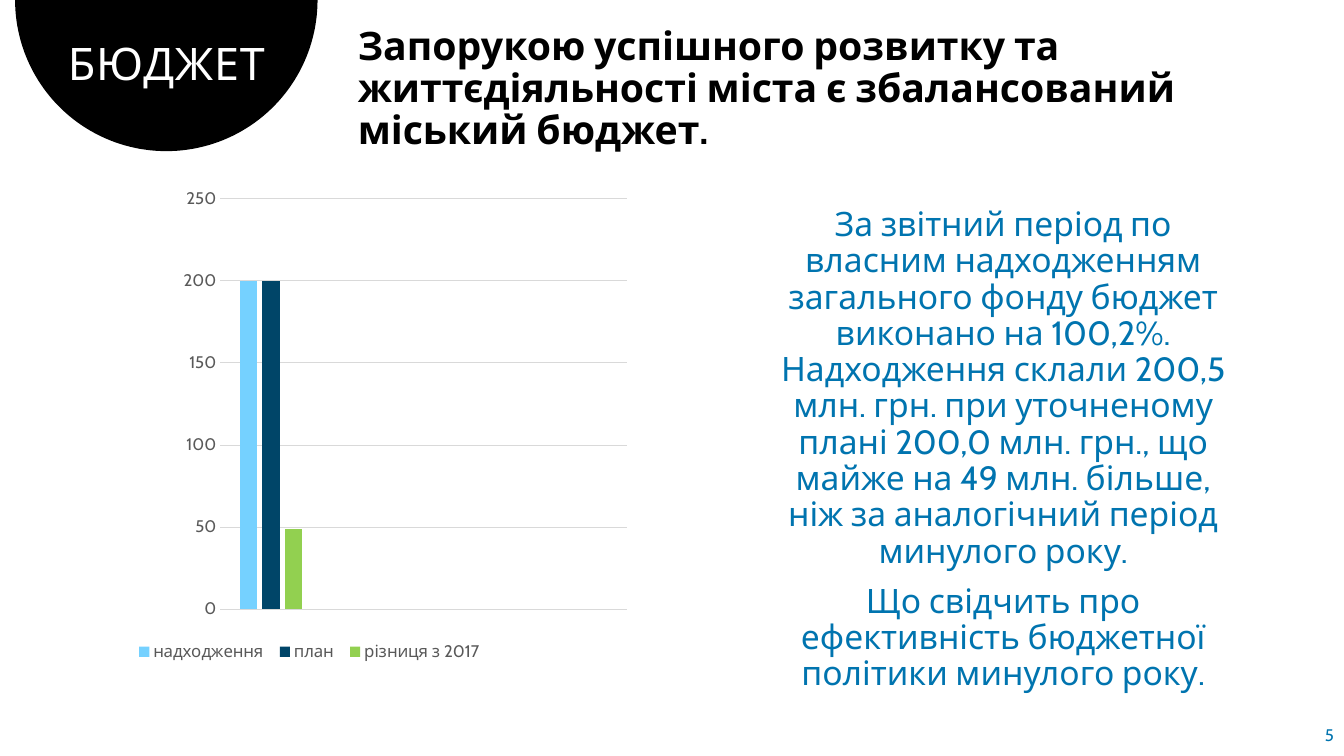
from math import cos, pi, sin

from lxml import etree
from pptx import Presentation
from pptx.chart.data import CategoryChartData
from pptx.dml.color import RGBColor
from pptx.enum.chart import XL_CHART_TYPE, XL_LEGEND_POSITION, XL_TICK_MARK
from pptx.enum.text import MSO_ANCHOR, PP_ALIGN
from pptx.oxml.ns import qn
from pptx.util import Inches, Pt

COLUMNS = XL_CHART_TYPE.COLUMN_CLUSTERED
BOTTOM = XL_LEGEND_POSITION.BOTTOM
NO_TICKS = XL_TICK_MARK.NONE
LEFT, CENTER, RIGHT = PP_ALIGN.LEFT, PP_ALIGN.CENTER, PP_ALIGN.RIGHT
TOP, MIDDLE = MSO_ANCHOR.TOP, MSO_ANCHOR.MIDDLE

COLORS = {
    "black": "000000",
    "white": "FFFFFF",
    "blue": "0074AF",
    "grey": "595959",
    "grid": "D9D9D9",
    "income": "75D1FF",
    "plan": "004568",
    "growth": "92D050",
}


def rgb(name):
    return RGBColor.from_string(COLORS[name])


class BudgetSlide:
    font_name = "Cabin"

    def __init__(self, presentation):
        self.slide = presentation.slides.add_slide(presentation.slide_layouts[6])

    def style(self, font, size, color, bold=False):
        font.name = self.font_name
        font.size = Pt(size)
        font.bold = bold
        font.color.rgb = rgb(color)

    def half_disc(self, center_x, radius, color, steps=90):
        angles = [pi * step / steps for step in range(steps + 1)]
        arc = [(Inches(center_x + radius * cos(a)), Inches(radius * sin(a))) for a in angles]
        builder = self.slide.shapes.build_freeform(*arc[0])
        builder.add_line_segments(arc[1:], close=True)
        disc = builder.convert_to_shape()
        disc.shadow.inherit = False
        disc.fill.solid()
        disc.fill.fore_color.rgb = rgb(color)
        disc.line.fill.background()

    def text(self, box, paragraphs, size, color, align=LEFT, bold=False,
             spacing=0.9, tracking=0, anchor=TOP, wrap=True):
        frame = self.slide.shapes.add_textbox(*map(Inches, box)).text_frame
        frame.word_wrap = wrap
        frame.vertical_anchor = anchor
        frame.text = "\n".join(paragraphs)
        for index, paragraph in enumerate(frame.paragraphs):
            paragraph.alignment = align
            paragraph.line_spacing = spacing
            paragraph.space_before = Pt(10 if index else 0)
            for run in paragraph.runs:
                self.style(run.font, size, color, bold)
                if tracking:
                    run.font._element.set("spc", str(int(tracking * 100)))

    def place(self, element, fractions, inner=False):
        layout = element.find(qn("c:layout"))
        if layout is None:
            layout = etree.Element(qn("c:layout"))
            position = element.find(qn("c:legendPos"))
            if position is None:
                element.insert(0, layout)
            else:
                position.addnext(layout)
        manual = etree.SubElement(layout, qn("c:manualLayout"))
        settings = [("layoutTarget", "inner")] if inner else []
        settings += [("xMode", "edge"), ("yMode", "edge")]
        settings += zip("xywh", map(str, fractions))
        for tag, value in settings:
            etree.SubElement(manual, qn(f"c:{tag}")).set("val", value)

    def column_chart(self, box, categories, series, plot_area, legend_area):
        data = CategoryChartData()
        data.categories = categories
        for name, values, _ in series:
            data.add_series(name, values)
        chart = self.slide.shapes.add_chart(COLUMNS, *map(Inches, box), data).chart
        self.style(chart.font, 10, "black")
        chart.has_title = False

        plot = chart.plots[0]
        plot.vary_by_categories = False
        plot.gap_width = 219
        plot.overlap = -27
        for columns, (_, _, color) in zip(plot.series, series):
            columns.format.fill.solid()
            columns.format.fill.fore_color.rgb = rgb(color)

        chart.category_axis.visible = False
        axis = chart.value_axis
        axis.minimum_scale, axis.maximum_scale, axis.major_unit = 0, 250, 50
        axis.major_tick_mark = axis.minor_tick_mark = NO_TICKS
        axis.format.line.fill.background()
        grid = axis.major_gridlines.format.line
        grid.color.rgb = rgb("grid")
        grid.width = Pt(0.75)
        self.style(axis.tick_labels.font, 12, "grey")

        chart.has_legend = True
        chart.legend.position = BOTTOM
        chart.legend.include_in_layout = False
        self.style(chart.legend.font, 12, "grey")
        self.place(chart.legend._element, legend_area)
        self.place(chart._chartSpace.chart.plotArea, plot_area, inner=True)


def main():
    presentation = Presentation()
    presentation.slide_width = Inches(13.33)
    presentation.slide_height = Inches(7.5)
    budget = BudgetSlide(presentation)

    budget.half_disc(1.65, 1.5, "black")
    budget.column_chart(
        (1.01, 1.74, 6.64, 5.56),
        ["1", "2", "3", "4"],
        [
            ("надходження", (200, None, None, None), "income"),
            ("план", (200, None, None, None), "plan"),
            ("різниця з 2017", (49, None, None, None), "growth"),
        ],
        plot_area=(0.177, 0.042, 0.607, 0.732),
        legend_area=(0.04, 0.82, 0.54, 0.06),
    )
    budget.text(
        (7.58, 2.01, 4.74, 5.47),
        [
            "За звітний період по власним надходженням загального фонду бюджет "
            "виконано на 100,2%. Надходження склали 200,5 млн. грн. при уточненому "
            "плані 200,0 млн. грн., що майже на 49 млн. більше, ніж за аналогічний "
            "період минулого року.",
            "Що свідчить про ефективність бюджетної політики минулого року.",
        ],
        24, "blue", align=CENTER,
    )
    budget.text((0.35, 0.37, 2.6, 0.59), ["БЮДЖЕТ"], 32, "white", align=CENTER, tracking=0.6)
    budget.text(
        (3.45, 0.21, 9.88, 0.95),
        ["Запорукою успішного розвитку та життєдіяльності міста є збалансований міський бюджет."],
        28, "black", bold=True,
    )
    budget.text((12.76, 7.09, 0.57, 0.4), ["5"], 12, "blue", align=RIGHT,
                spacing=1.0, anchor=MIDDLE, wrap=False)

    presentation.save("out.pptx")


if __name__ == "__main__":
    main()
